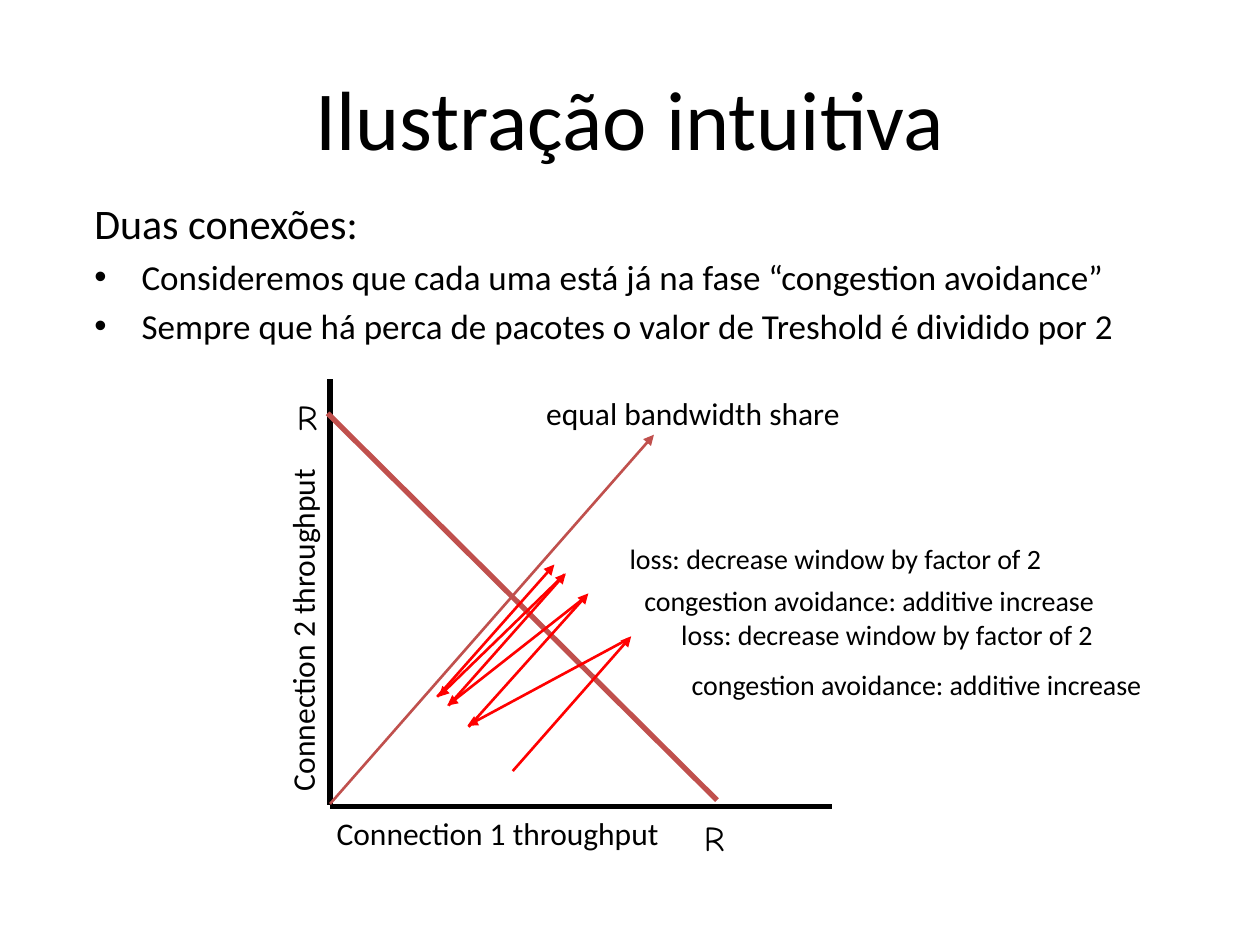
"""Build a slide on how two connections converge to an equal bandwidth share."""
from lxml.etree import SubElement
from pptx import Presentation
from pptx.dml.color import RGBColor
from pptx.enum.shapes import MSO_CONNECTOR
from pptx.enum.text import MSO_ANCHOR, PP_ALIGN
from pptx.oxml.ns import qn
from pptx.util import Pt

THEME = {
    "font": "Calibri", "mark_font": "Comic Neue",
    "text": "000000", "guide": "C0504D", "path": "FF0000",
    "title": 48, "heading": 24, "bullet": 20, "mark": 20, "axis": 18, "note": 16,
    "thick": 3, "thin": 1.5,
}

TITLE = "Ilustração intuitiva"
HEADING = "Duas conexões:"
BULLETS = [
    "Consideremos que cada uma está já na fase “congestion avoidance”",
    "Sempre que há perca de pacotes o valor de Treshold é dividido por 2",
]
HANGING = 27
INCREASE = "congestion avoidance: additive increase"
LOSS = "loss: decrease window by factor of 2"

AXES = [((188.6, 460.8), (475.2, 460.8)), ((188.6, 460), (188.6, 216.7))]
EQUAL_SHARE = ((188.6, 459.4), (373.7, 248.4))
FULL_USE = ((187.2, 236.2), (409.7, 457.2))
PATH = [
    ((293, 440.6), (360.7, 363.6)),
    ((359.3, 365), (267.1, 414.7)),
    ((267.8, 415.4), (336.2, 339.1)),
    ((332.6, 342.7), (255.6, 403.2)),
    ((256.3, 403.2), (323.3, 327.6)),
    ((322.6, 328.3), (250.6, 398.2)),
    ((249.8, 398.2), (316.8, 322.6)),
]

MARKS = [(159.8, 222.5, 31.7, 31), (392.4, 463, 31.7, 31)]
AXIS_LABELS = [
    ("equal bandwidth share", (256.3, 221.8, 279.4, 28.8), 0),
    ("Connection 1 throughput", (144.7, 461.5, 279.4, 28.8), 0),
    ("Connection 2 throughput", (33.1, 345.6, 279.4, 28.8), 270),
]
NOTES = [
    (INCREASE, (354.2, 378, 339.1, 26.6), True),
    (LOSS, (380.9, 349.2, 252, 26.6), False),
    (INCREASE, (318.2, 329.8, 357.1, 26.6), True),
    (LOSS, (351.4, 306, 252, 26.6), False),
]


def add_box(slide, box, wrap=True, rotation=0, anchor=MSO_ANCHOR.TOP):
    """Add an empty text box and return its text frame."""
    shape = slide.shapes.add_textbox(*map(Pt, box))
    shape.rotation = rotation
    shape.text_frame.word_wrap = wrap
    shape.text_frame.vertical_anchor = anchor
    return shape.text_frame


def write(paragraph, text, size, font=THEME["font"], align=PP_ALIGN.CENTER,
          before=0, hanging=0, bullet=False):
    """Write formatted text into a paragraph."""
    run = paragraph.add_run()
    run.text = text
    run.font.name = font
    run.font.size = Pt(size)
    run.font.color.rgb = RGBColor.from_string(THEME["text"])
    paragraph.alignment = align
    paragraph.space_before = Pt(before)
    properties = paragraph._p.get_or_add_pPr()
    if hanging:
        properties.set("marL", str(Pt(hanging)))
        properties.set("indent", str(-Pt(hanging)))
    if bullet:
        SubElement(properties, qn("a:buFont"), typeface="Arial")
        SubElement(properties, qn("a:buChar"), char="•")


def add_line(slide, ends, color, width, arrow=False):
    """Add a straight line, with an arrowhead at its end if wanted."""
    start, end = ends
    connector = slide.shapes.add_connector(
        MSO_CONNECTOR.STRAIGHT, *map(Pt, start + end))
    connector.line.color.rgb = RGBColor.from_string(color)
    connector.line.width = Pt(width)
    if arrow:
        SubElement(connector.line._get_or_add_ln(), qn("a:tailEnd"), type="triangle")
    SubElement(connector._element.spPr, qn("a:effectLst"))


def add_body(slide):
    """Add the heading and its bullets."""
    frame = add_box(slide, (46.8, 109.4, 614.2, 90))
    write(frame.paragraphs[0], HEADING, THEME["heading"],
          align=PP_ALIGN.LEFT, hanging=HANGING)
    for text in BULLETS:
        write(frame.add_paragraph(), text, THEME["bullet"], align=PP_ALIGN.LEFT,
              before=THEME["bullet"] * 0.2, hanging=HANGING, bullet=True)


def add_diagram(slide):
    """Add the throughput diagram and its labels."""
    for axis in AXES:
        add_line(slide, axis, THEME["text"], THEME["thick"])
    add_line(slide, EQUAL_SHARE, THEME["guide"], THEME["thin"], arrow=True)
    add_line(slide, FULL_USE, THEME["guide"], THEME["thick"])
    for box in MARKS:
        write(add_box(slide, box).paragraphs[0], "R", THEME["mark"],
              font=THEME["mark_font"])
    for text, box, rotation in AXIS_LABELS:
        write(add_box(slide, box, rotation=rotation).paragraphs[0], text, THEME["axis"])
    for text, box, wrap in NOTES:
        write(add_box(slide, box, wrap=wrap).paragraphs[0], text, THEME["note"])
    for step in PATH:
        add_line(slide, step, THEME["path"], THEME["thin"], arrow=True)


def main():
    """Build and save the presentation."""
    presentation = Presentation()
    presentation.slide_width, presentation.slide_height = Pt(720), Pt(540)
    slide = presentation.slides.add_slide(presentation.slide_layouts[6])
    title = add_box(slide, (36, 21.6, 648, 90), anchor=MSO_ANCHOR.MIDDLE)
    write(title.paragraphs[0], TITLE, THEME["title"])
    add_body(slide)
    add_diagram(slide)
    presentation.save("out.pptx")


if __name__ == "__main__":
    main()
